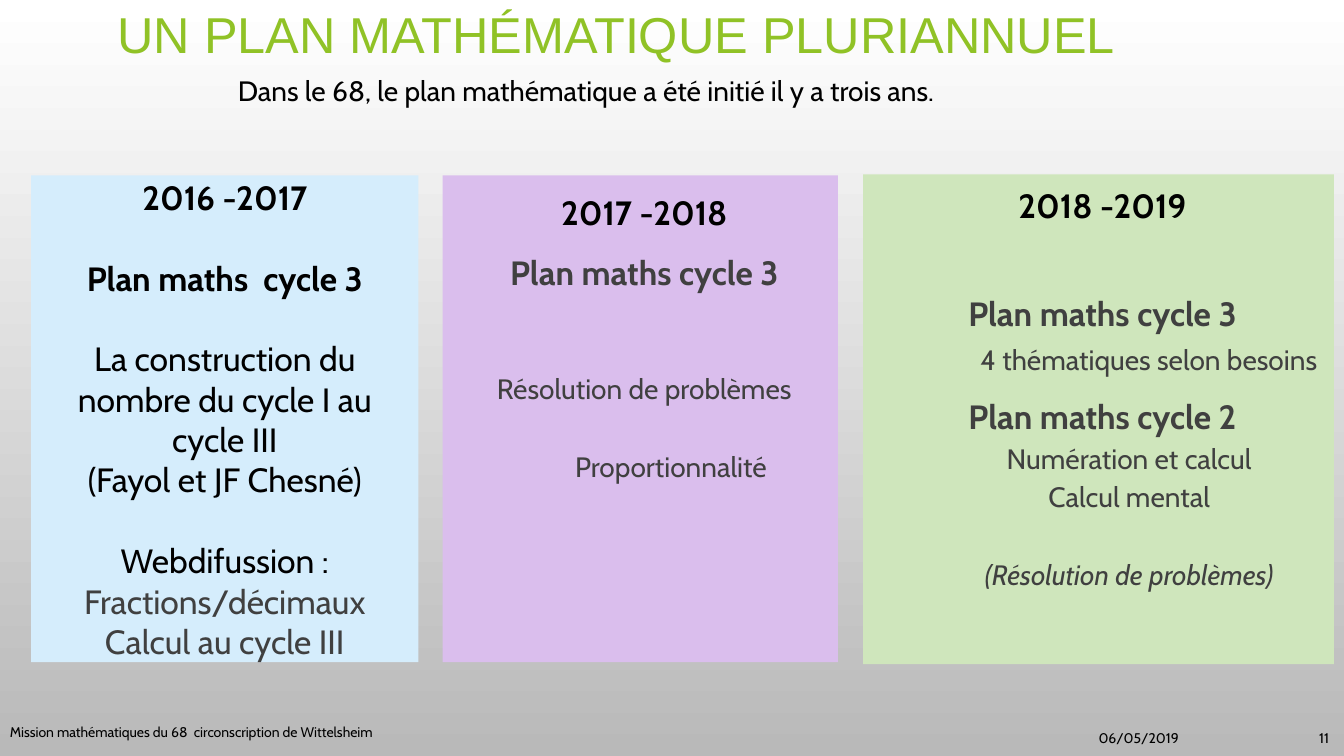
from pptx import Presentation
from pptx import util as u
from pptx.dml.color import RGBColor
from pptx.enum import shapes, text

PX = 9144
BLACK = RGBColor(0, 0, 0)
DARK = RGBColor(0x40, 0x40, 0x40)
LIME = RGBColor(0x90, 0xC2, 0x26)
WHITE = RGBColor(0xFF, 0xFF, 0xFF)
GREY = RGBColor(0xB9, 0xB9, 0xB9)
SKY = RGBColor(0xD5, 0xED, 0xFC)
LILAC = RGBColor(0xDA, 0xBE, 0xED)
MINT = RGBColor(0xCF, 0xE6, 0xBC)
LEFT, MID, RIGHT = text.PP_ALIGN.LEFT, text.PP_ALIGN.CENTER, text.PP_ALIGN.RIGHT
TOP, HALF = text.MSO_ANCHOR.TOP, text.MSO_ANCHOR.MIDDLE


def frame(shape, anchor, inset):
    body = shape.text_frame
    body.word_wrap = True
    body.vertical_anchor = anchor
    body.margin_left = body.margin_right = 10 * PX
    body.margin_top = body.margin_bottom = inset * PX
    return body


def write(para, words, size, color, align, font="Cabin", style=""):
    para.alignment = align
    run = para.add_run()
    run.text = words
    run.font.name = font
    run.font.size = u.Pt(size)
    run.font.color.rgb = color
    run.font.bold = style == "b"
    run.font.italic = style == "i"


prs = Presentation()
prs.slide_width, prs.slide_height = 1333 * PX, 750 * PX
slide = prs.slides.add_slide(prs.slide_layouts[6])
back = slide.background.fill
back.gradient()
back.gradient_angle = 270
for stop, color, place in zip(back.gradient_stops, (WHITE, GREY), (0, 1)):
    stop.color.rgb = color
    stop.position = place

labels = [
    ((45, 0, 1133, 73), "UN PLAN MATHÉMATIQUE PLURIANNUEL", 36, LIME, MID, "Arial", HALF, 5, 0.9),
    ((226, 63, 919, 61), "Dans le 68, le plan mathématique a été initié il y a trois ans.",
     20, BLACK, LEFT, "Cabin", TOP, 10, 1),
    ((0, 706, 730, 40), "Mission mathématiques du 68  circonscription de Wittelsheim",
     10, BLACK, LEFT, "Cabin", HALF, 5, 1),
    ((879, 712, 300, 40), "06/05/2019", 10, BLACK, RIGHT, "Cabin", HALF, 5, 1),
    ((1244, 712, 84, 40), "11", 10, BLACK, RIGHT, "Cabin", HALF, 5, 1),
]
for box, words, size, color, align, font, anchor, inset, line in labels:
    label = slide.shapes.add_textbox(*(n * PX for n in box))
    para = frame(label, anchor, inset).paragraphs[0]
    para.line_spacing = line
    write(para, words, size, color, align, font)

cards = [
    ((31, 174, 384, 483), SKY, HALF, [
        ("2016 -2017", 24, BLACK, "b", 0, 1, 0),
        ("Plan maths  cycle 3", 24, BLACK, "b", 0, 1, 29),
        ("La construction du nombre du cycle I au cycle III", 24, BLACK, "", 0, 1, 29),
        ("(Fayol et JF Chesné)", 24, BLACK, "", 0, 1, 0),
        ("Webdifussion :", 24, BLACK, "", 0, 1, 29),
        ("Fractions/décimaux", 24, DARK, "", 0, 1, 0),
        ("Calcul au cycle III", 24, DARK, "", 0, 1, 0),
    ]),
    ((439, 174, 392, 483), LILAC, TOP, [
        ("2017 -2018", 24, BLACK, "b", 8, 1.15, 0),
        ("Plan maths cycle 3", 24, DARK, "b", 8, 1.15, 10),
        ("Résolution de problèmes", 20, DARK, "", 8, 1.15, 53),
        ("Proportionnalité", 20, DARK, "", 61, 1.15, 28),
    ]),
    ((856, 173, 467, 486), MINT, TOP, [
        ("2018 -2019", 24, BLACK, "b", 8, 1, 0),
        ("Plan maths cycle 3", 24, DARK, "b", 8, 1, 49),
        ("4 thématiques selon besoins", 20, DARK, "", 100, 1, 6),
        ("Plan maths cycle 2", 24, DARK, "b", 8, 1.15, 10),
        ("Numération et calcul", 20, DARK, "", 61, 1.15, 0),
        ("Calcul mental", 20, DARK, "", 61, 1.15, 0),
        ("(Résolution de problèmes)", 20, DARK, "i", 61, 1.15, 28),
    ]),
]
for box, fill, anchor, lines in cards:
    card = slide.shapes.add_shape(shapes.MSO_SHAPE.RECTANGLE, *(n * PX for n in box))
    card.shadow.inherit = False
    card.fill.solid()
    card.fill.fore_color.rgb = fill
    card.line.fill.background()
    body = frame(card, anchor, 10)
    for i, (words, size, color, style, indent, line, gap) in enumerate(lines):
        para = body.add_paragraph() if i else body.paragraphs[0]
        para.line_spacing = line
        para.space_before = u.Pt(gap)
        para._p.get_or_add_pPr().set("marL", str(indent * PX))
        write(para, words, size, color, MID, style=style)

prs.save("out.pptx")
